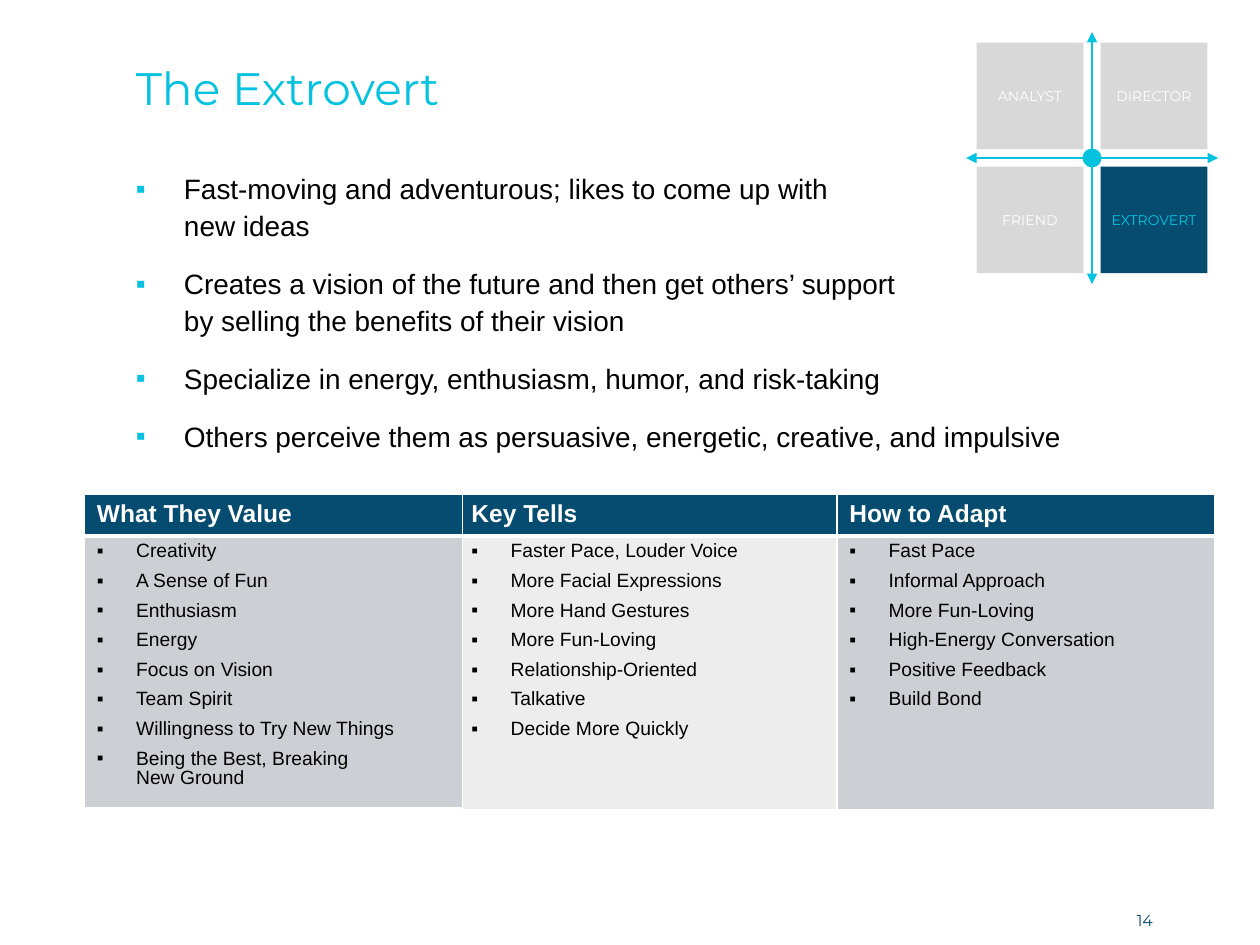
"""Build the personality-style slide about the Extrovert."""
from copy import deepcopy
from dataclasses import dataclass

from lxml import etree
from pptx import Presentation
from pptx.dml.color import RGBColor
from pptx.enum.shapes import MSO_CONNECTOR, MSO_SHAPE
from pptx.enum.text import MSO_ANCHOR, PP_ALIGN
from pptx.oxml.ns import qn
from pptx.util import Cm, Pt

CENTER = PP_ALIGN.CENTER
MIDDLE = MSO_ANCHOR.MIDDLE
TOP = MSO_ANCHOR.TOP
RECTANGLE = MSO_SHAPE.RECTANGLE
OVAL = MSO_SHAPE.OVAL
STRAIGHT = MSO_CONNECTOR.STRAIGHT


@dataclass(frozen=True)
class TextStyle:
    size: float
    font: str
    color: str
    bold: bool = False


@dataclass(frozen=True)
class Theme:
    navy: str = "054C70"
    cyan: str = "05C3DE"
    white: str = "FFFFFF"
    black: str = "000000"
    tile_gray: str = "D8D8D8"
    cool_gray: str = "CCD0D5"
    pale_gray: str = "EDEDED"
    heading_font: str = "Montserrat"
    body_font: str = "Arial"
    title_size: float = 26
    body_size: float = 16
    header_size: float = 14
    item_size: float = 11
    number_size: float = 9
    tile_size: float = 8
    line_width: float = 1.5
    border_width: float = 1
    header_rule: float = 3


@dataclass(frozen=True)
class TraitTable:
    left: float
    body_height: float
    fill: str
    header: str
    items: tuple[str, ...]


@dataclass(frozen=True)
class StyleTile:
    label: str
    column: int
    row: int
    fill: str
    color: str


THEME = Theme()
TITLE = TextStyle(THEME.title_size, THEME.heading_font, THEME.cyan)
BODY = TextStyle(THEME.body_size, THEME.body_font, THEME.black)
HEADER = TextStyle(THEME.header_size, THEME.body_font, THEME.white, True)
ITEM = TextStyle(THEME.item_size, THEME.body_font, THEME.black)
NUMBER = TextStyle(THEME.number_size, THEME.heading_font, THEME.navy)

TITLE_FORMAT = {"line_spacing": 0.85}
BODY_FORMAT = {"line_spacing": 1.1, "space_after": Pt(12)}
ITEM_FORMAT = {"line_spacing": 0.9, "space_before": Pt(1.9), "space_after": Pt(4)}
CENTERED = {"alignment": CENTER}

TRAITS = (
    "Fast-moving and adventurous; likes to come up with\nnew ideas",
    "Creates a vision of the future and then get others’ support\nby selling the benefits of their vision",
    "Specialize in energy, enthusiasm, humor, and risk-taking",
    "Others perceive them as persuasive, energetic, creative, and impulsive",
)
TABLES = (
    TraitTable(9.25, 5.51, THEME.pale_gray, "Key Tells", (
        "Faster Pace, Louder Voice", "More Facial Expressions", "More Hand Gestures",
        "More Fun-Loving", "Relationship-Oriented", "Talkative", "Decide More Quickly")),
    TraitTable(1.7, 5.31, THEME.cool_gray, "What They Value", (
        "Creativity", "A Sense of Fun", "Enthusiasm", "Energy", "Focus on Vision", "Team Spirit",
        "Willingness to Try New Things", "Being the Best, Breaking\nNew Ground")),
    TraitTable(16.87, 5.51, THEME.cool_gray, "How to Adapt", (
        "Fast Pace", "Informal Approach", "More Fun-Loving", "High-Energy Conversation",
        "Positive Feedback", "Build Bond")),
)
TILES = (
    StyleTile("ANALYST", 0, 0, THEME.tile_gray, THEME.white),
    StyleTile("FRIEND", 0, 1, THEME.tile_gray, THEME.white),
    StyleTile("DIRECTOR", 1, 0, THEME.tile_gray, THEME.white),
    StyleTile("EXTROVERT", 1, 1, THEME.navy, THEME.cyan),
)
TABLE_TOP, TABLE_WIDTH, HEADER_HEIGHT = 9.96, 7.62, 0.84
TILE_LEFT, TILE_TOP, TILE_SIDE, TILE_PITCH = 19.69, 0.86, 2.15, 2.5
DOT_SIDE, AXIS_START, AXIS_END = 0.33, 0.1, 2.54
AXIS_DIRECTIONS = ((0, -1), (-1, 0), (0, 1), (1, 0))


def paint(target, color: str) -> None:
    """Give a cell or shape a solid fill."""
    target.fill.solid()
    target.fill.fore_color.rgb = RGBColor.from_string(color)


def add_bullet(paragraph, color: str, indent: float) -> None:
    """Give a paragraph a square bullet with a hanging indent."""
    properties = paragraph._p.get_or_add_pPr()
    properties.set("marL", str(Cm(indent)))
    properties.set("indent", str(-Cm(indent)))
    bullet_color = etree.SubElement(properties, qn("a:buClr"))
    etree.SubElement(bullet_color, qn("a:srgbClr"), val=color)
    etree.SubElement(properties, qn("a:buFont"), typeface=THEME.body_font)
    etree.SubElement(properties, qn("a:buChar"), char="▪")


def write(frame, lines: tuple[str, ...], style: TextStyle, layout: dict,
          bullet: tuple[str, float] | None = None) -> None:
    """Fill a text frame with equally formatted paragraphs."""
    for index, line in enumerate(lines):
        paragraph = frame.add_paragraph() if index else frame.paragraphs[0]
        paragraph.text = line
        if bullet:
            add_bullet(paragraph, *bullet)
        for attribute, value in layout.items():
            if index or attribute != "space_before":
                setattr(paragraph, attribute, value)
        font_format = {"size": Pt(style.size), "name": style.font, "bold": style.bold}
        for run in paragraph.runs:
            for attribute, value in font_format.items():
                setattr(run.font, attribute, value)
            run.font.color.rgb = RGBColor.from_string(style.color)
        for line_break in paragraph._p.findall(qn("a:br")):
            line_break.append(deepcopy(paragraph.runs[0].font._element))


def add_text(shapes, bounds: tuple[float, ...], lines: tuple[str, ...], style: TextStyle,
             layout: dict, anchor=TOP, bullet: tuple[str, float] | None = None) -> None:
    """Place a text box without inner margins."""
    frame = shapes.add_textbox(*map(Cm, bounds)).text_frame
    frame_format = {"word_wrap": True, "vertical_anchor": anchor, "margin_left": 0,
                    "margin_top": 0, "margin_right": 0, "margin_bottom": 0}
    for attribute, value in frame_format.items():
        setattr(frame, attribute, value)
    write(frame, lines, style, layout, bullet)


def add_borders(cell, top: float, bottom: float) -> None:
    """Draw white cell borders."""
    properties = cell._tc.get_or_add_tcPr()
    widths = {"L": THEME.border_width, "R": THEME.border_width, "T": top, "B": bottom}
    for side, width in widths.items():
        border = etree.SubElement(properties, qn(f"a:ln{side}"), w=str(Pt(width)))
        fill = etree.SubElement(border, qn("a:solidFill"))
        etree.SubElement(fill, qn("a:srgbClr"), val=THEME.white)


def add_trait_table(shapes, traits: TraitTable) -> None:
    """Place a one-column table of a header above a bulleted list."""
    heights = (HEADER_HEIGHT, traits.body_height)
    bounds = (traits.left, TABLE_TOP, TABLE_WIDTH, sum(heights))
    table = shapes.add_table(2, 1, *map(Cm, bounds)).table
    table.horz_banding = False
    for row, height in zip(table.rows, heights):
        row.height = Cm(height)
    header, body = table.cell(0, 0), table.cell(1, 0)
    add_borders(header, THEME.border_width, THEME.header_rule)
    add_borders(body, THEME.header_rule, THEME.border_width)
    paint(header, THEME.navy)
    paint(body, traits.fill)
    write(header.text_frame, (traits.header,), HEADER, {})
    write(body.text_frame, traits.items, ITEM, ITEM_FORMAT, (THEME.black, 0.79))


def add_tile(shapes, tile: StyleTile) -> None:
    """Place one labelled square of the style grid."""
    square = shapes.add_shape(RECTANGLE, Cm(TILE_LEFT + tile.column * TILE_PITCH),
                              Cm(TILE_TOP + tile.row * TILE_PITCH), Cm(TILE_SIDE), Cm(TILE_SIDE))
    square.shadow.inherit = False
    square.line.fill.background()
    paint(square, tile.fill)
    square.text_frame.word_wrap = False
    square.text_frame.vertical_anchor = MIDDLE
    style = TextStyle(THEME.tile_size, THEME.heading_font, tile.color)
    write(square.text_frame, (tile.label,), style, CENTERED)


def style_line(line) -> None:
    """Apply the axis colour and width to a line."""
    line.color.rgb = RGBColor.from_string(THEME.cyan)
    line.width = Pt(THEME.line_width)


def add_style_grid(shapes) -> None:
    """Place the four style tiles with their crossing axes."""
    grid = shapes.add_group_shape().shapes
    for tile in TILES:
        add_tile(grid, tile)
    half = (TILE_PITCH + TILE_SIDE) / 2
    x, y = TILE_LEFT + half, TILE_TOP + half
    dot = grid.add_shape(OVAL, Cm(x - DOT_SIDE / 2), Cm(y - DOT_SIDE / 2), Cm(DOT_SIDE), Cm(DOT_SIDE))
    dot.shadow.inherit = False
    paint(dot, THEME.cyan)
    style_line(dot.line)
    for dx, dy in AXIS_DIRECTIONS:
        ends = (x + dx * AXIS_START, y + dy * AXIS_START, x + dx * AXIS_END, y + dy * AXIS_END)
        axis = grid.add_connector(STRAIGHT, *map(Cm, ends))
        style_line(axis.line)
        etree.SubElement(axis.line._get_or_add_ln(), qn("a:tailEnd"), type="triangle")
        etree.SubElement(axis._element.spPr, qn("a:effectLst"))


def main() -> None:
    """Create and save the slide."""
    deck = Presentation()
    deck.slide_width, deck.slide_height = Cm(25.4), Cm(19.05)
    shapes = deck.slides.add_slide(deck.slide_layouts[6]).shapes
    add_text(shapes, (22.66, 18.36, 0.84, 0.38), ("14",), NUMBER, CENTERED)
    add_text(shapes, (2.74, 0.81, 20.75, 2.06), ("The Extrovert",), TITLE, TITLE_FORMAT, MIDDLE)
    add_text(shapes, (2.74, 3.4, 19.33, 5.72), TRAITS, BODY, BODY_FORMAT, bullet=(THEME.cyan, 0.97))
    for traits in TABLES:
        add_trait_table(shapes, traits)
    add_style_grid(shapes)
    deck.save("out.pptx")


if __name__ == "__main__":
    main()
